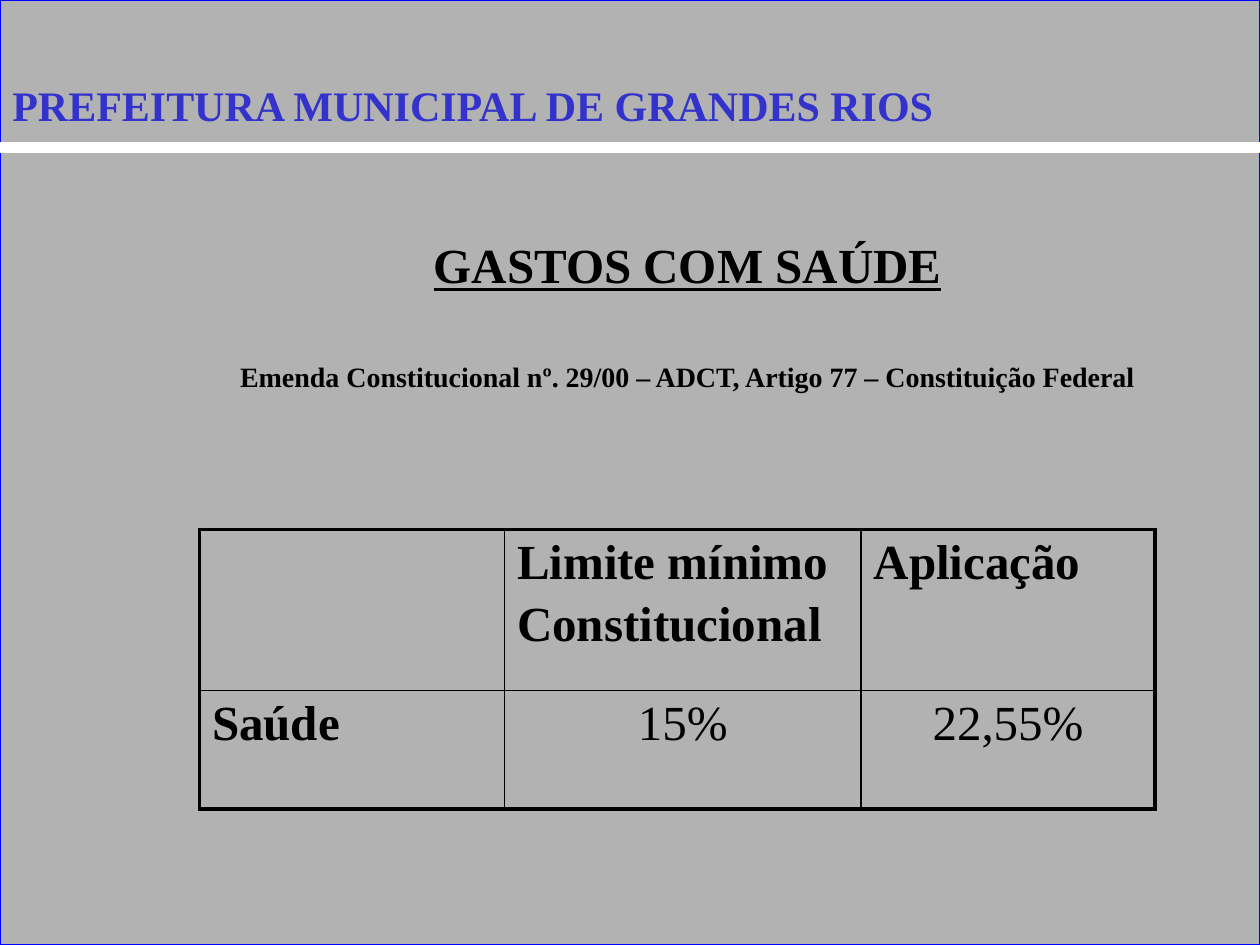
from dataclasses import dataclass

from lxml.etree import SubElement
from pptx import Presentation
from pptx.dml.color import RGBColor
from pptx.enum.shapes import MSO_CONNECTOR as Connector, MSO_SHAPE as Shape
from pptx.enum.text import PP_ALIGN as Align
from pptx.oxml.ns import qn
from pptx.util import Cm, Pt

FONT = "Times New Roman"
BLACK, BLUE, GREY, WHITE = "000000", "3333CC", "B2B2B2", "FFFFFF"
OUTER, INNER = 2.25, 1


@dataclass
class Line:
    text: str
    size: float
    bold: bool = True
    underline: bool = False
    color: str = BLACK
    align: Align = Align.LEFT
    before: float = 0
    spacing: float = 1.0


def rgb(code: str) -> RGBColor:
    return RGBColor.from_string(code)


def write(frame, lines: list[Line]) -> None:
    frame.text = "\n".join(line.text for line in lines)
    for paragraph, line in zip(frame.paragraphs, lines):
        paragraph.alignment = line.align
        paragraph.space_before = Pt(line.before)
        paragraph.line_spacing = line.spacing
        for run in paragraph.runs:
            font = run.font
            font.name, font.size = FONT, Pt(line.size)
            font.bold, font.underline = line.bold, line.underline
            font.color.rgb = rgb(line.color)


def add_text(slide, left: float, top: float, width: float, height: float, lines: list[Line]):
    box = slide.shapes.add_textbox(Cm(left), Cm(top), Cm(width), Cm(height))
    box.text_frame.word_wrap = True
    write(box.text_frame, lines)
    return box


def add_text_shadow(run) -> None:
    properties = run.font._element
    effects = SubElement(properties, qn("a:effectLst"))
    properties.find(qn("a:solidFill")).addnext(effects)
    shadow = SubElement(effects, qn("a:outerShdw"), dist="35921", dir="2700000", algn="ctr")
    SubElement(shadow, qn("a:srgbClr"), val="808080")


def set_borders(cell, widths: dict[str, float]) -> None:
    properties = cell._tc.get_or_add_tcPr()
    for side, width in widths.items():
        border = SubElement(properties, qn(f"a:ln{side}"), w=str(Pt(width)))
        SubElement(SubElement(border, qn("a:solidFill")), qn("a:srgbClr"), val=BLACK)


def add_spending_table(slide, rows: list[list[list[Line]]], widths: list[float], heights: list[float]) -> None:
    table = slide.shapes.add_table(
        len(heights), len(widths), Cm(4.02), Cm(10.67), Cm(sum(widths)), Cm(sum(heights))
    ).table
    table.first_row = table.horz_banding = False
    for column, width in zip(table.columns, widths):
        column.width = Cm(width)
    last_row, last_column = len(heights) - 1, len(widths) - 1
    for r, row in enumerate(rows):
        table.rows[r].height = Cm(heights[r])
        for c, lines in enumerate(row):
            cell = table.cell(r, c)
            set_borders(cell, {
                "L": OUTER if c == 0 else INNER,
                "R": OUTER if c == last_column else INNER,
                "T": OUTER if r == 0 else INNER,
                "B": OUTER if r == last_row else INNER,
            })
            cell.fill.background()
            write(cell.text_frame, lines)


def main() -> None:
    """Build the slide on municipal health spending."""
    deck = Presentation()
    deck.slide_width, deck.slide_height = Cm(25.4), Cm(19.05)
    slide = deck.slides.add_slide(deck.slide_layouts[6])

    backdrop = slide.shapes.add_shape(Shape.RECTANGLE, 0, 0, deck.slide_width, deck.slide_height)
    backdrop.shadow.inherit = False
    backdrop.fill.solid()
    backdrop.fill.fore_color.rgb = rgb(GREY)
    backdrop.line.color.rgb = rgb("0000FF")
    backdrop.line.width = Pt(0.75)

    divider = slide.shapes.add_connector(Connector.STRAIGHT, 0, Cm(2.97), deck.slide_width, Cm(2.97))
    divider.line.color.rgb = rgb(WHITE)
    divider.line.width = Pt(6)
    SubElement(divider._element.spPr, qn("a:effectLst"))

    add_text(slide, 3.6, 4.02, 20.52, 4.5, [
        Line("GASTOS COM SAÚDE", 28, underline=True, align=Align.CENTER, spacing=1.5),
        Line("Emenda Constitucional nº. 29/00 – ADCT, Artigo 77 – Constituição Federal",
             16, align=Align.CENTER, before=28, spacing=1.5),
    ])

    add_spending_table(slide, [
        [[], [Line("Limite mínimo", 28), Line("Constitucional", 28, before=4.5)], [Line("Aplicação", 28)]],
        [[Line("Saúde", 28)]] + [
            [Line(share, 28, bold=False, align=Align.CENTER)] for share in ("15%", "22,55%")
        ],
    ], widths=[6.15, 7.19, 5.92], heights=[3.25, 2.39])

    heading = add_text(slide, 0, 1.47, 20.9, 1.27, [
        Line("PREFEITURA MUNICIPAL DE GRANDES RIOS", 24, color=BLUE),
    ])
    add_text_shadow(heading.text_frame.paragraphs[0].runs[0])

    deck.save("out.pptx")


if __name__ == "__main__":
    main()
